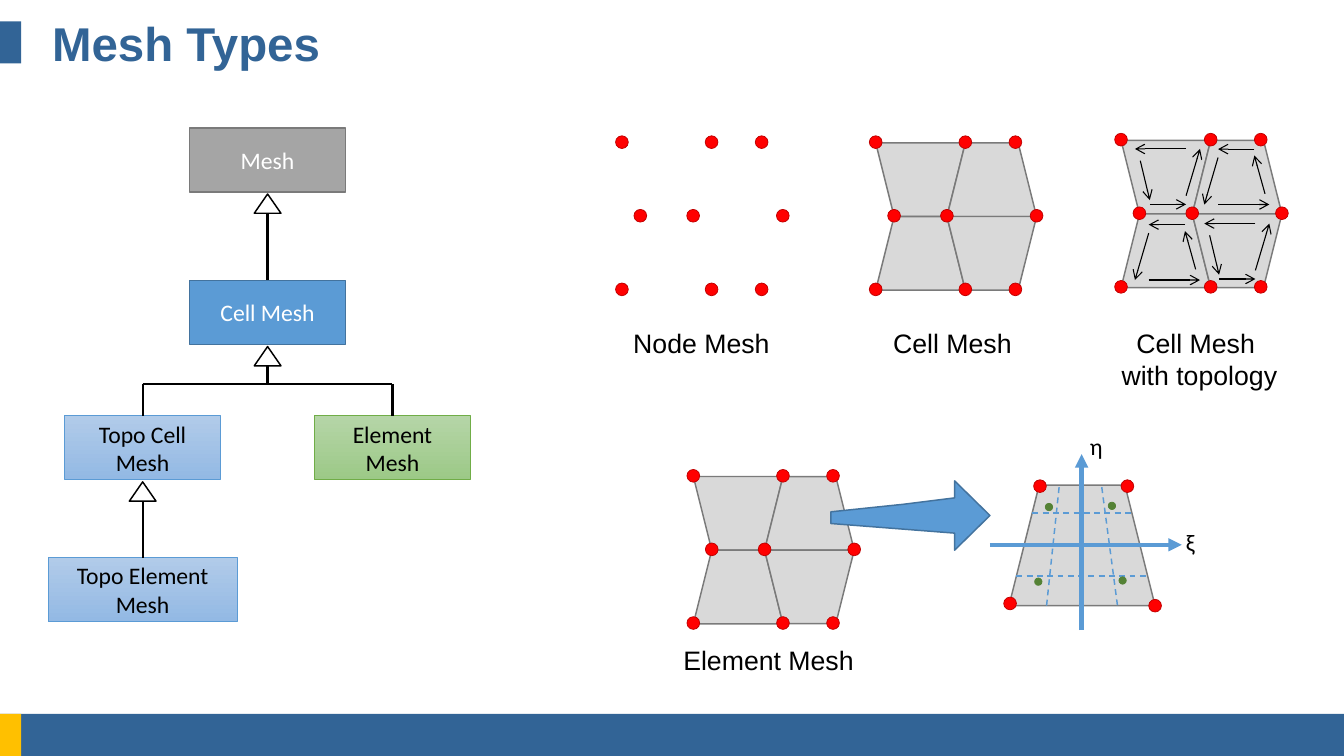
from dataclasses import dataclass

from lxml import etree
from pptx import Presentation
from pptx import util as u
from pptx.dml.color import RGBColor
from pptx.enum import dml, shapes, text
from pptx.oxml.ns import qn


@dataclass(frozen=True)
class Theme:
    navy: str = "326496"
    gold: str = "FFC000"
    blue: str = "5B9BD5"
    blue_edge: str = "43739E"
    blue_fade: tuple = ("B1CBE9", "93B9E4")
    green_fade: tuple = ("B5D5A7", "9CC987")
    green_edge: str = "70AD47"
    gauss: str = "548235"
    gray: str = "A5A5A5"
    gray_edge: str = "7A7A7A"
    cell: str = "D9D9D9"
    node: str = "FF0000"
    node_edge: str = "C00000"
    black: str = "000000"
    white: str = "FFFFFF"
    head_font: str = "Arial"
    box_font: str = "Calibri"
    title: int = 32
    caption: int = 18
    label: int = 16


T = Theme()
KIND = shapes.MSO_SHAPE


def paint(sp, fill, edge=None, width=1):
    sp.shadow.inherit = False
    if isinstance(fill, tuple):
        sp.fill.gradient()
        sp.fill.gradient_angle = 270
        for stop, color in zip(sp.fill.gradient_stops, fill):
            stop.color.rgb = RGBColor.from_string(color)
    else:
        sp.fill.solid()
        sp.fill.fore_color.rgb = RGBColor.from_string(fill)
    if edge:
        sp.line.color.rgb = RGBColor.from_string(edge)
        sp.line.width = u.Pt(width)
    else:
        sp.line.fill.background()


def add_shape(parent, kind, box, fill, edge=None, width=1):
    sp = parent.shapes.add_shape(kind, *map(u.Pt, box))
    paint(sp, fill, edge, width)
    return sp


def add_dot(parent, x, y, size, fill, edge):
    add_shape(parent, KIND.OVAL, (x - size / 2, y - size / 2, size, size), fill, edge, 0.5)


def add_line(parent, start, end, color, width, head=None, dash=False):
    c = parent.shapes.add_connector(shapes.MSO_CONNECTOR.STRAIGHT, *map(u.Pt, start + end))
    c.line.color.rgb = RGBColor.from_string(color)
    c.line.width = u.Pt(width)
    if dash:
        c.line.dash_style = dml.MSO_LINE.DASH
    spPr = c.element.spPr
    if head:
        etree.SubElement(spPr.find(qn("a:ln")), qn("a:tailEnd"), type=head)
    etree.SubElement(spPr, qn("a:effectLst"))
    return c


def write(sp, words, font, size, color, align, bold=False):
    tf = sp.text_frame
    tf.vertical_anchor = text.MSO_ANCHOR.MIDDLE
    tf.word_wrap = True
    p = tf.paragraphs[0]
    p.text = words
    p.alignment = align
    p.font.name, p.font.size, p.font.bold = font, u.Pt(size), bold
    p.font.color.rgb = RGBColor.from_string(color)
    return tf


def add_label(parent, box, words, font, size, align=text.PP_ALIGN.LEFT):
    s = parent.shapes.add_textbox(*map(u.Pt, box))
    tf = write(s, words, font, size, T.black, align)
    tf.vertical_anchor = text.MSO_ANCHOR.TOP
    tf.word_wrap = False
    tf.auto_size = text.MSO_AUTO_SIZE.SHAPE_TO_FIT_TEXT


def draw_frame(s, box):
    """Title, side tab and footer band."""
    x, y, w, h = box
    bar, tab = 28.4, 14.4
    foot = y + h - bar
    add_shape(s, KIND.RECTANGLE, (x, foot, w, bar), T.navy)
    add_shape(s, KIND.RECTANGLE, (x, foot, tab, bar), T.gold)
    add_shape(s, KIND.RECTANGLE, (x, y + tab, tab, bar), T.navy)
    title = s.shapes.add_textbox(*map(u.Pt, (x + 28.1, y + tab, w - 56.9, bar)))
    write(title, "Mesh Types", T.head_font, T.title, T.navy, text.PP_ALIGN.LEFT, True)


def draw_hierarchy(s, box):
    """Class boxes with inheritance arrows."""
    x, y, w, h = box
    g = s.shapes.add_group_shape()
    bw, bh = 105.1, 43.2

    def class_box(words, cx, top, fill, edge, color, line, width=bw):
        sp = add_shape(g, KIND.RECTANGLE, (cx - width / 2, top, width, bh), fill, edge, line)
        write(sp, words, T.box_font, T.label, color, text.PP_ALIGN.CENTER)
        return sp

    def triangle(cx, top):
        tw, th = 18, 13
        add_shape(g, KIND.ISOSCELES_TRIANGLE, (cx - tw / 2, top, tw, th), T.white, T.black)
        return cx, top + th

    left, right = x + 63.9, x + w - bw / 2
    mid = (left + right) / 2
    cell_top, child_top, leaf_top = y + 103, y + 194.4, y + h - bh
    class_box("Mesh", mid, y, T.gray, T.gray_edge, T.white, 1)
    cell = class_box("Cell Mesh", mid, cell_top, T.blue, T.blue_edge, T.white, 1)
    topo = class_box("Topo Cell Mesh", left, child_top, T.blue_fade, T.blue, T.black, 0.5)
    element = class_box("Element Mesh", right, child_top, T.green_fade, T.green_edge, T.black, 0.5)
    leaf = class_box("Topo Element Mesh", left, leaf_top, T.blue_fade, T.blue, T.black, 0.5, 127.4)

    # Single inheritance
    for child, cx, parent_top in ((cell, mid, y), (leaf, left, child_top)):
        base = triangle(cx, parent_top + bh + 1.4)
        c = add_line(g, base, base, T.black, 1.5)
        c.end_connect(child, 0)
    # Branch to two children
    bar = y + 172.8
    add_line(g, triangle(mid, cell_top + bh + 1.4), (mid, bar), T.black, 1.5)
    add_line(g, (left, bar), (right, bar), T.black, 1.5)
    for child, cx in ((topo, left), (element, right)):
        c = add_line(g, (cx, bar), (cx, child_top), T.black, 1.5)
        c.end_connect(child, 0)


# Arrow loops round a cell (start x, y, end x, y) and the shift to the second cell
LOOPS = (
    ((46.8, 50.4), ((19.4, 43.2, 43.9, 43.2), (43.9, 37.4, 53.3, 5.8),
                    (43.9, 5.8, 9.4, 5.8), (13, 13.7, 19.4, 40.3))),
    ((46.8, -51), ((43.2, 56.9, 18.7, 56.9), (18.7, 62.6, 9.4, 94.3),
                   (18.7, 94.3, 53.3, 94.3), (50.4, 87.1, 43.2, 61.2))),
)


def draw_mesh(s, box, cells=True, topology=False):
    """Nine nodes, optionally with four cells and their arrow loops."""
    x, y, w, h = box
    g = s.shapes.add_group_shape()
    ch = h / 2
    inset = ch / 4
    cw = (w + inset) / 2
    if cells:
        for row in range(2):
            for col in range(2):
                sp = add_shape(g, KIND.TRAPEZOID, (x + col * (cw - inset), y + row * ch, cw, ch),
                               T.cell, T.gray_edge)
                if row == col:
                    sp.element.spPr.find(qn("a:xfrm")).set("flipV", "1")
    outer, middle = (0, cw, w - 14.3), (inset, cw - inset, w)
    for row, columns in enumerate((outer, middle, outer)):
        for dx in columns:
            add_dot(g, x + dx, y + row * ch - 0.5, 8.6, T.node, T.node_edge)
    if topology:
        for shift, loop in LOOPS:
            for sx, sy in ((x, y), (x + shift[0], y + shift[1])):
                for x1, y1, x2, y2 in loop:
                    add_line(g, (sx + x1, sy + y1), (sx + x2, sy + y2), T.black, 0.75, "arrow")


def draw_callout(s, box):
    """Widening block arrow."""
    x, y, w, h = box
    neck = w - 23.8
    outline = [(0, 20.9), (49, 15.8), (neck, 11.5), (neck, 0), (w, h / 2),
               (neck, h), (neck, 35.3), (0, 28.8)]
    pts = [(u.Pt(x + dx), u.Pt(y + dy)) for dx, dy in outline]
    fb = s.shapes.build_freeform(*pts[0])
    fb.add_line_segments(pts[1:], close=True)
    paint(fb.convert_to_shape(), T.blue, T.blue_edge)


def draw_element(s, box):
    """Reference element with axes, guides and integration points."""
    x, y, w, h = box
    g = s.shapes.add_group_shape()
    add_shape(g, KIND.TRAPEZOID, box, T.cell, T.gray_edge)
    for x1, y1, x2, y2 in ((49, 97.9, 49, -20.9), (-13, 40.3, 116.6, 40.3)):
        add_line(g, (x + x1, y + y1), (x + x2, y + y2), T.blue, 3, "triangle")
    for x1, y1, x2, y2 in ((33.8, 1.4, 25.2, 82.8), (62.6, 1.4, 73.4, 82.8),
                           (15.8, 18.7, 82.8, 18.7), (5, 61.2, 92.9, 61.2)):
        add_line(g, (x + x1, y + y1), (x + x2, y + y2), T.blue, 1, dash=True)
    for words, dx, dy, width in (("η", 47.5, -39.6, 23), ("ξ", 112.3, 25.2, 20.9)):
        add_label(g, (x + dx, y + dy, width, 26.6), words, T.box_font, T.label)
    for dx, dy in ((20.9, 0.7), (79.9, 0.7), (w, h), (0.7, h - 1.5)):
        add_dot(g, x + dx, y + dy, 8.6, T.node, T.node_edge)
    for dx, dy in ((19.8, 65.2), (27, 14.8), (69.5, 14), (76.7, 64.4)):
        add_dot(g, x + dx, y + dy, 5, T.gauss, T.gauss)


def main():
    prs = Presentation()
    prs.slide_width, prs.slide_height = u.Pt(907.2), u.Pt(510.48)
    s = prs.slides.add_slide(prs.slide_layouts[6])
    draw_frame(s, (0, 0, 907.2, 510.48))
    draw_hierarchy(s, (32.4, 86.4, 285.1, 333.4))

    # Meshes
    size = (108.6, 99.4)
    draw_mesh(s, (419.8, 96.5) + size, cells=False)
    draw_mesh(s, (591.1, 96.5) + size)
    draw_mesh(s, (756.7, 94.8) + size, topology=True)
    draw_mesh(s, (468, 321.8) + size)
    draw_callout(s, (560.9, 324.7, 107.3, 46.8))
    draw_element(s, (681.1, 327.6, 98.6, 81.4))

    # Captions
    for words, box in (("Node Mesh", (419.8, 217.4, 107.3, 28.8)),
                       ("Cell Mesh", (595.4, 217.4, 95, 28.8)),
                       ("Cell Mesh \vwith topology", (749.5, 217.4, 120.2, 51.1)),
                       ("Element Mesh", (453.6, 431.3, 130.3, 28.8))):
        add_label(s, box, words, T.head_font, T.caption, text.PP_ALIGN.CENTER)
    prs.save("out.pptx")


if __name__ == "__main__":
    main()
